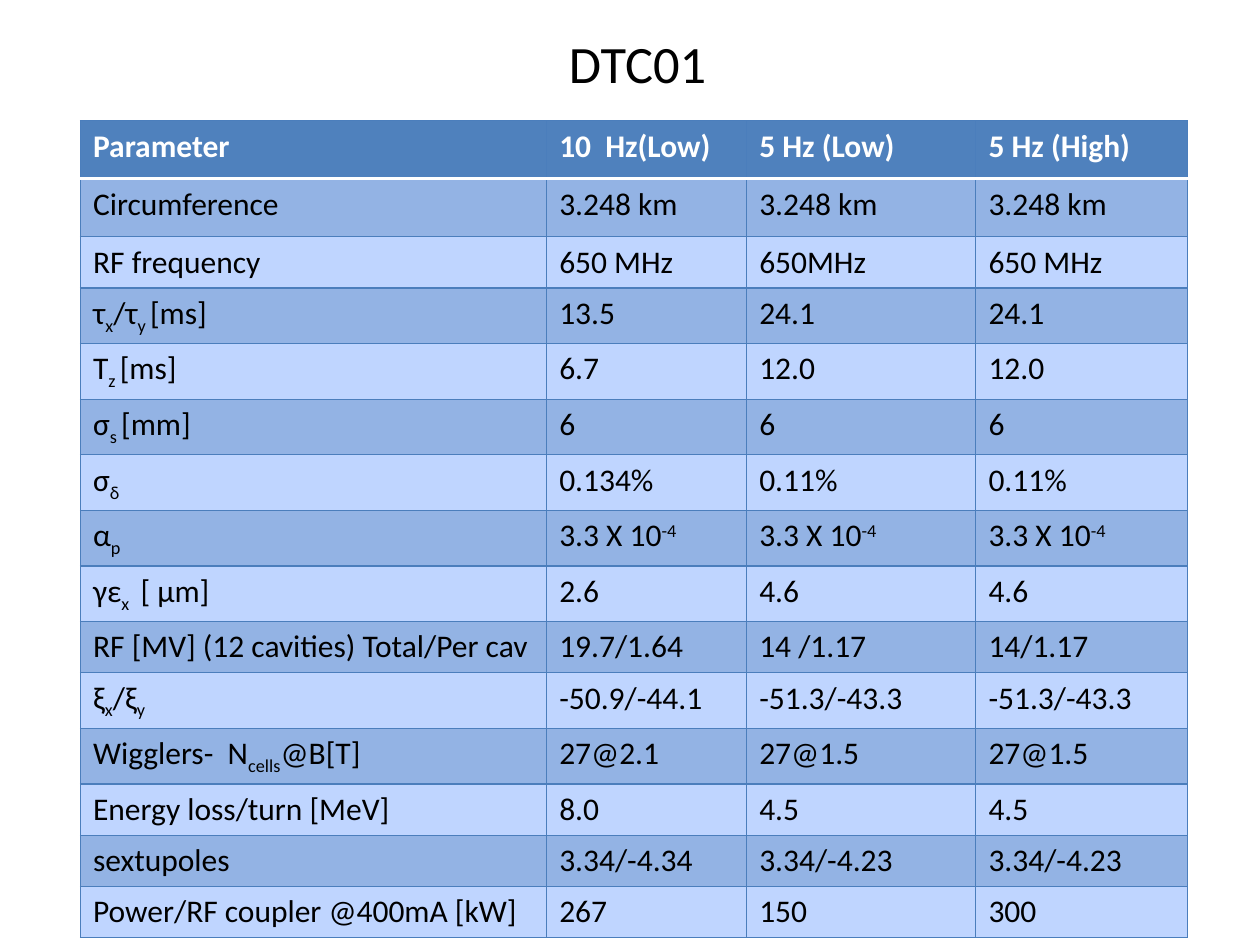
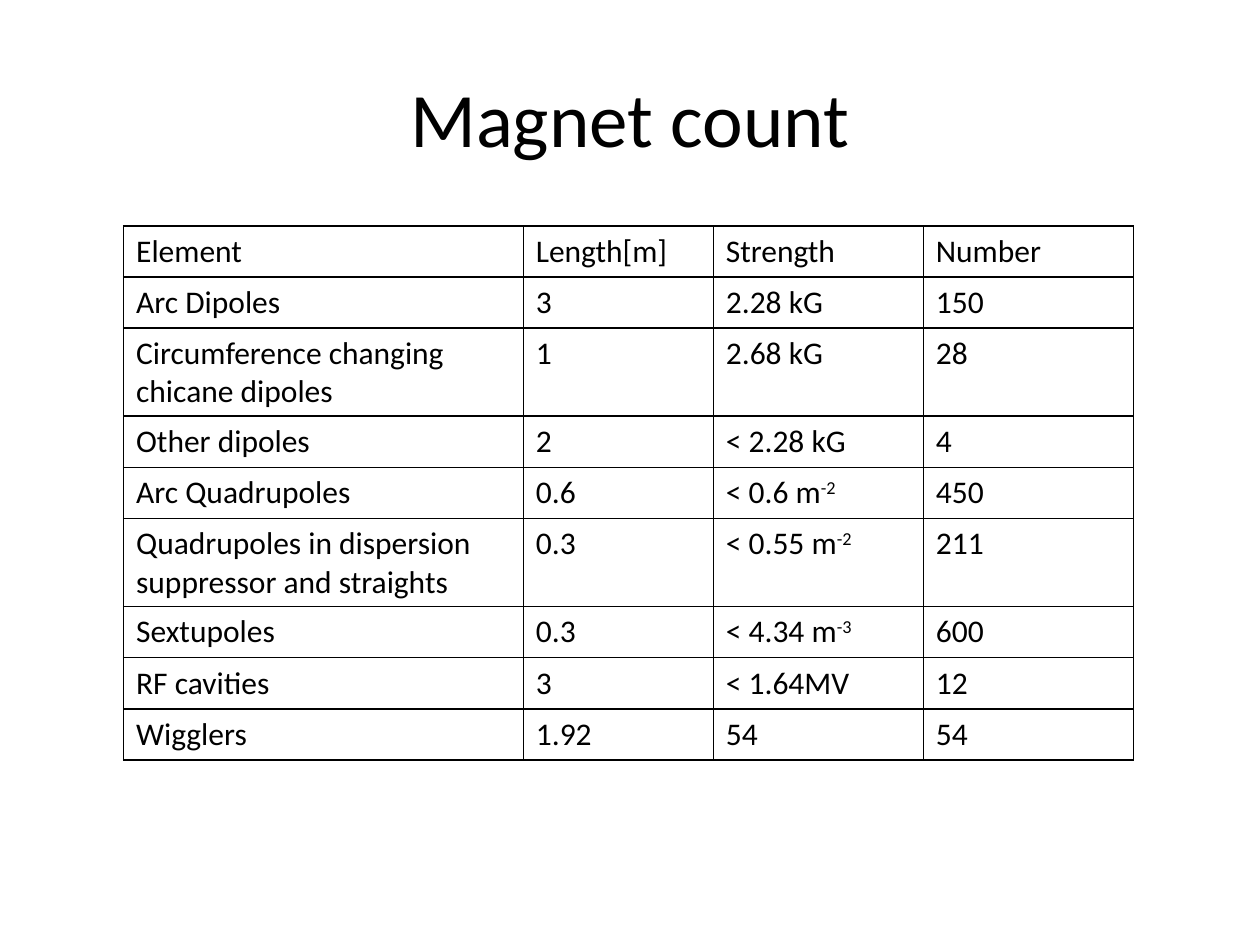
"""Build two slides of damping ring parameters and magnet counts as tables."""
import pptx
import pptx.dml.color
import pptx.enum.text
import pptx.oxml.ns
import pptx.util
import lxml.etree

Pt = pptx.util.Pt

COLOURS = {
    "text": "000000",
    "header_text": "FFFFFF",
    "header": "4F81BD",
    "dark_band": "93B3E4",
    "light_band": "BFD5FF",
    "blue_line": "4B7EBC",
    "header_rule": "FFFFFF",
    "black_line": "000000",
}
FONT = "Calibri"
CELL_SIZE = 18
BASELINES = {"_": "-25000", "^": "30000"}

# Pieces are split at "|"; a piece led by "_" is lowered, one led by "^" is raised.
PARAMETERS = [
    ("Parameter", "10  Hz(Low)", "5 Hz (Low)", "5 Hz (High)"),
    ("Circumference", "3.248 km", "3.248 km", "3.248 km"),
    ("RF frequency", "650 MHz", "650MHz", "650 MHz"),
    ("τ|_x|/τ|_y |[ms]", "13.5", "24.1", "24.1"),
    ("Τ|_z |[ms]", "6.7", "12.0", "12.0"),
    ("σ|_s |[mm]", "6", "6", "6"),
    ("σ|_δ", "0.134%", "0.11%", "0.11%"),
    ("α|_p", "3.3 X 10|^-4", "3.3 X 10|^-4", "3.3 X 10|^-4"),
    ("γε|_x | [ μm]", "2.6", "4.6", "4.6"),
    ("RF [MV] (12 cavities) Total/Per cav", "19.7/1.64", "14 /1.17", "14/1.17"),
    ("ξ|_x|/ξ|_y", "-50.9/-44.1", "-51.3/-43.3", "-51.3/-43.3"),
    ("Wigglers-  N|_cells|@B[T]", "27@2.1", "27@1.5", "27@1.5"),
    ("Energy loss/turn [MeV]", "8.0", "4.5", "4.5"),
    ("sextupoles", "3.34/-4.34", "3.34/-4.23", "3.34/-4.23"),
    ("Power/RF coupler @400mA [kW]", "267", "150", "300"),
]
MAGNETS = [
    ("Element", "Length[m]", "Strength", "Number"),
    ("Arc Dipoles", "3", "2.28 kG", "150"),
    ("Circumference changing chicane dipoles", "1", "2.68 kG", "28"),
    ("Other dipoles", "2", "< 2.28 kG", "4"),
    ("Arc Quadrupoles", "0.6", "< 0.6 m|^-2", "450"),
    ("Quadrupoles in dispersion suppressor and straights", "0.3", "< 0.55 m|^-2", "211"),
    ("Sextupoles", "0.3", "< 4.34 m|^-3", "600"),
    ("RF cavities", "3", "< 1.64MV", "12"),
    ("Wigglers", "1.92", "54", "54"),
]
SLIDES = [
    {"title": [(" ", 32), ("DTC01", 30)], "title_at": (19.5, -10, 682.5, 90),
     "rows": PARAMETERS, "table_at": (46, 69), "widths": (266.4, 114.3, 131, 121),
     "heights": [33.2] * 2 + [29.2] * 13, "banded": True, "line": ("blue_line", 0.75)},
    {"title": [("Magnet count", 44)], "title_at": (36, 21.6, 648, 90),
     "rows": MAGNETS, "table_at": (70.6, 129), "widths": (228.4, 108.6, 120, 120),
     "heights": [29.2] * 9, "banded": False, "line": ("black_line", 1)},
]


def colour(name):
    return pptx.dml.color.RGBColor.from_string(COLOURS[name])


def add_span(para, text, size, colour_name="text", bold=False):
    span = para.add_run()
    span.text = text
    span.font.name = FONT
    span.font.size = Pt(size)
    span.font.bold = bold
    span.font.color.rgb = colour(colour_name)
    return span


def add_title(page, spans, place):
    box = page.shapes.add_textbox(*map(Pt, place))
    frame = box.text_frame
    frame.word_wrap = True
    frame.vertical_anchor = pptx.enum.text.MSO_ANCHOR.MIDDLE
    para = frame.paragraphs[0]
    para.alignment = pptx.enum.text.PP_ALIGN.CENTER
    for text, size in spans:
        add_span(para, text, size)


def fill_text(cell, text, colour_name, bold):
    para = cell.text_frame.paragraphs[0]
    for piece in text.split("|"):
        baseline = BASELINES.get(piece[0])
        span = add_span(para, piece[1:] if baseline else piece, CELL_SIZE, colour_name, bold)
        if baseline:
            span.font._element.set("baseline", baseline)


def set_borders(cell, lines):
    qn = pptx.oxml.ns.qn
    properties = cell._tc.get_or_add_tcPr()
    for side in "LRTB":
        name, width = lines[side]
        line = lxml.etree.SubElement(properties, qn(f"a:ln{side}"), w=str(int(Pt(width))))
        solid = lxml.etree.SubElement(line, qn("a:solidFill"))
        lxml.etree.SubElement(solid, qn("a:srgbClr"), val=COLOURS[name])


def add_grid(page, rows, place, widths, heights, banded, line):
    frame = page.shapes.add_table(len(rows), len(widths), *map(Pt, place),
                                  Pt(sum(widths)), Pt(sum(heights)))
    table = frame.table
    table.first_row = table.horz_banding = False
    for column, width in zip(table.columns, widths):
        column.width = Pt(width)
    for index, (row, height) in enumerate(zip(table.rows, heights)):
        row.height = Pt(height)
        header = banded and index == 0
        band = "header" if header else "dark_band" if index % 2 else "light_band"
        lines = dict.fromkeys("LRTB", line)
        if banded and index < 2:
            lines["T" if index else "B"] = ("header_rule", 2)
        for cell, text in zip(row.cells, rows[index]):
            fill_text(cell, text, "header_text" if header else "text", header)
            set_borders(cell, lines)
            if banded:
                cell.fill.solid()
                cell.fill.fore_color.rgb = colour(band)
            else:
                cell.fill.background()


def main():
    deck = pptx.Presentation()
    deck.slide_width, deck.slide_height = Pt(720), Pt(540)
    for slide in SLIDES:
        page = deck.slides.add_slide(deck.slide_layouts[6])
        add_title(page, slide["title"], slide["title_at"])
        add_grid(page, slide["rows"], slide["table_at"], slide["widths"],
                 slide["heights"], slide["banded"], slide["line"])
    deck.save("out.pptx")


if __name__ == "__main__":
    main()
